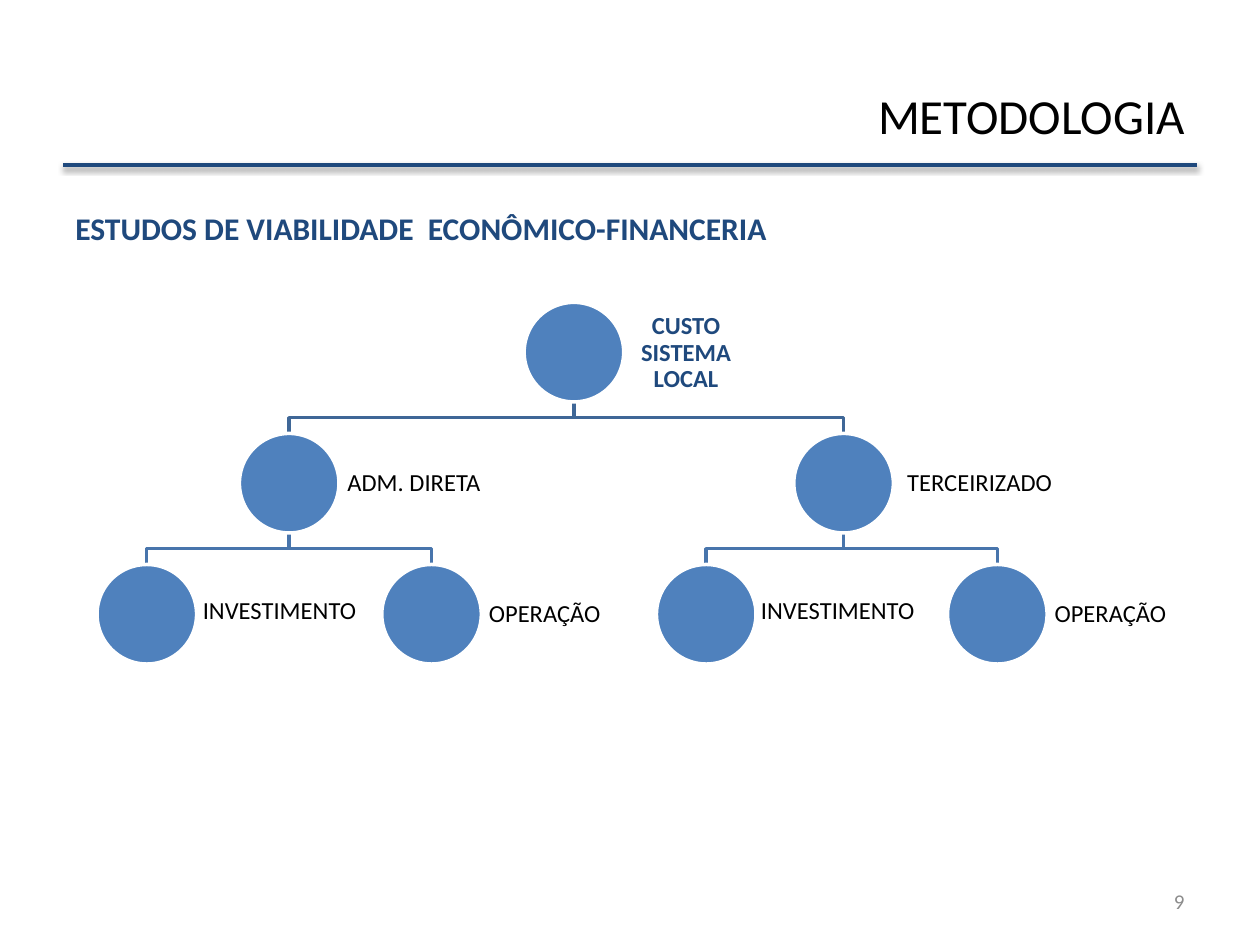
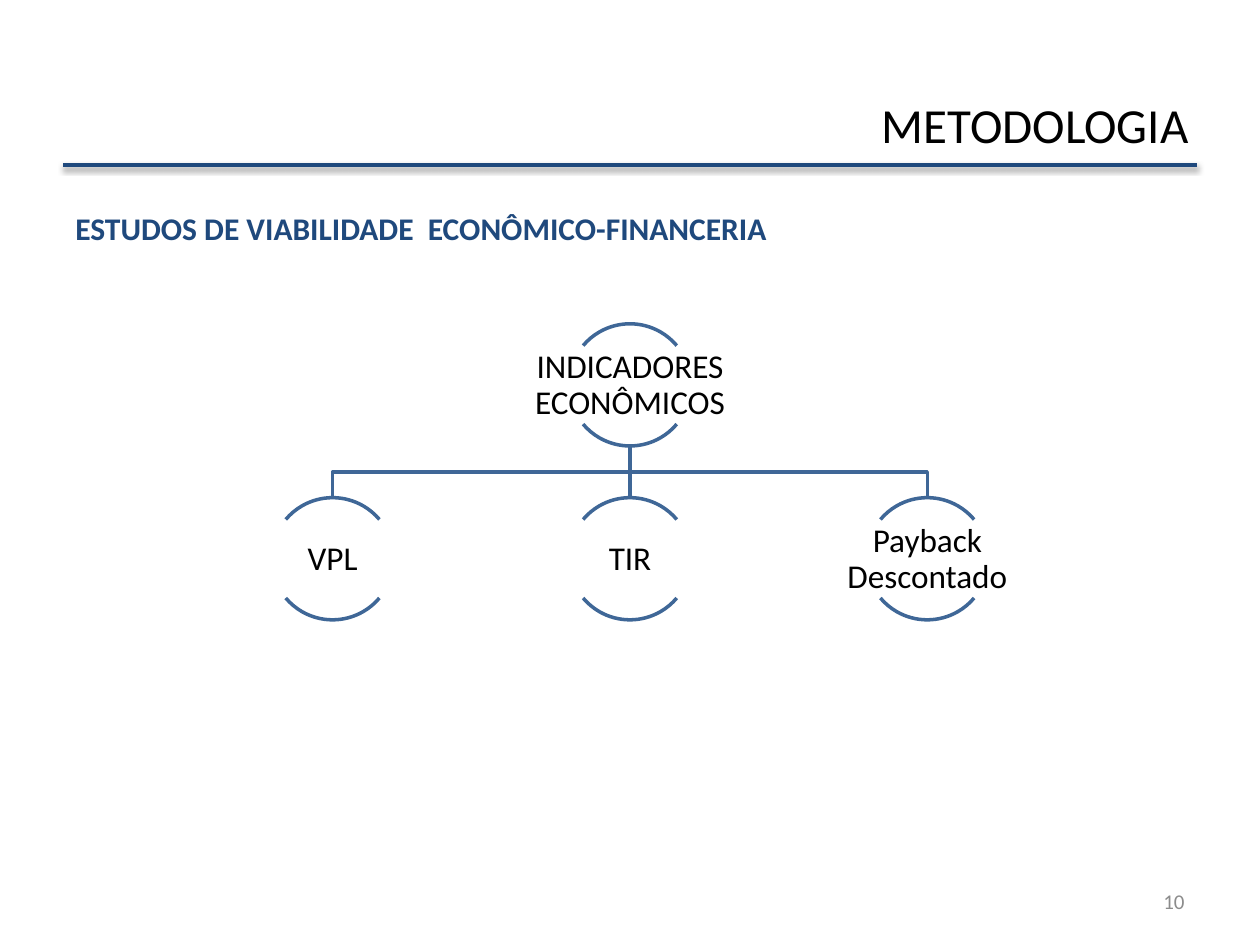
from dataclasses import dataclass

from lxml.etree import SubElement
from pptx import Presentation
from pptx.dml.color import RGBColor
from pptx.enum.shapes import MSO_CONNECTOR, MSO_SHAPE
from pptx.enum.text import MSO_ANCHOR, PP_ALIGN
from pptx.oxml.ns import qn
from pptx.util import Inches, Pt


@dataclass(frozen=True)
class Theme:
    font: str = "Calibri"
    navy: str = "1F497D"
    blue: str = "4F81BD"
    upper_branch: str = "3F6797"
    lower_branch: str = "4875AC"
    black: str = "000000"
    white: str = "FFFFFF"
    gray: str = "8C8C8C"
    title: int = 28
    subtitle: int = 18
    indicator: int = 19
    cost: int = 14
    page: int = 12
    stroke: int = 2


@dataclass(frozen=True)
class Cost:
    label: str
    left: float
    level: int
    parent: int | None
    label_dx: float = 0.79
    label_dy: float = 0
    label_width: float = 1.19
    centered: bool = False


THEME = Theme()
COSTS = [
    Cost("CUSTO SISTEMA LOCAL", 3.39, 0, None, 0.69, 0.01, centered=True),
    Cost("ADM. DIRETA", 1.13, 1, 0, centered=True),
    Cost("TERCEIRIZADO", 5.53, 1, 0, 0.84, 0, 1.45),
    Cost("INVESTIMENTO", 0, 2, 1, 0.78, -0.02, 1.36),
    Cost("OPERAÇÃO", 2.26, 2, 1),
    Cost("INVESTIMENTO", 4.44, 2, 2, 0.77, -0.02, 1.44),
    Cost("OPERAÇÃO", 6.75, 2, 2),
]
INDICATORS = ["VPL", "TIR", "Payback Descontado"]


def color(value):
    return RGBColor.from_string(value)


def write(slide, text, box, size=THEME.cost, ink=THEME.black, bold=False,
          align=PP_ALIGN.LEFT, anchor=MSO_ANCHOR.MIDDLE, inset=None, spacing=None):
    frame = slide.shapes.add_textbox(*map(Inches, box)).text_frame
    frame.word_wrap = True
    frame.vertical_anchor = anchor
    if inset is not None:
        frame.margin_left = frame.margin_right = Inches(inset)
        frame.margin_top = frame.margin_bottom = Inches(inset)
    paragraph = frame.paragraphs[0]
    paragraph.alignment = align
    if spacing:
        paragraph.line_spacing = spacing
    run = paragraph.add_run()
    run.text = text
    run.font.name = THEME.font
    run.font.size = Pt(size)
    run.font.bold = bold
    run.font.color.rgb = color(ink)


def stroke(line, ink):
    line.color.rgb = color(ink)
    line.width = Pt(THEME.stroke)


def straight_line(slide, start, end, ink):
    connector = slide.shapes.add_connector(
        MSO_CONNECTOR.STRAIGHT, *map(Inches, (*start, *end)))
    stroke(connector.line, ink)
    return SubElement(connector._element.spPr, qn("a:effectLst"))


def branch(slide, start, end, ink):
    if start[0] == end[0]:
        straight_line(slide, start, end, ink)
        return
    middle = (start[1] + end[1]) / 2
    corners = [(start[0], middle), (end[0], middle), end]
    builder = slide.shapes.build_freeform(*map(Inches, start))
    builder.add_line_segments(
        [(Inches(x), Inches(y)) for x, y in corners], close=False)
    elbow = builder.convert_to_shape()
    elbow.shadow.inherit = False
    elbow.fill.background()
    stroke(elbow.line, ink)


def header_rule(slide, left, top, width):
    effects = straight_line(slide, (left, top), (left + width, top), THEME.navy)
    shadow = SubElement(effects, qn("a:outerShdw"), blurRad="40000",
                        dist="20000", dir="5400000", rotWithShape="0")
    ink = SubElement(shadow, qn("a:srgbClr"), val=THEME.black)
    SubElement(ink, qn("a:alpha"), val="38000")


def methodology_slide(deck, page, title_left, title_top):
    slide = deck.slides.add_slide(deck.slide_layouts[6])
    write(slide, str(page), (7.17, 6.95, 2.33, 0.4), size=THEME.page,
          ink=THEME.gray, align=PP_ALIGN.RIGHT)
    write(slide, "METODOLOGIA", (title_left, title_top, 9, 1.25),
          size=THEME.title, align=PP_ALIGN.RIGHT)
    header_rule(slide, 0.5, 1.31, 9)
    write(slide, "ESTUDOS DE VIABILIDADE  ECONÔMICO-FINANCERIA",
          (0.5, 1.61, 6, 0.4), size=THEME.subtitle, ink=THEME.navy, bold=True,
          anchor=MSO_ANCHOR.TOP)
    return slide


def cost_tree(slide, left, top, diameter=0.79, level_step=1.04):
    def corner(cost):
        return left + cost.left, top + cost.level * level_step

    for cost in COSTS:
        if cost.parent is None:
            continue
        parent_x, parent_y = corner(COSTS[cost.parent])
        x, y = corner(cost)
        branch(slide, (parent_x + diameter / 2, parent_y + diameter),
               (x + diameter / 2, y),
               THEME.upper_branch if cost.level == 1 else THEME.lower_branch)

    for cost in COSTS:
        x, y = corner(cost)
        circle = slide.shapes.add_shape(
            MSO_SHAPE.OVAL, *map(Inches, (x, y, diameter, diameter)))
        circle.shadow.inherit = False
        circle.fill.solid()
        circle.fill.fore_color.rgb = color(THEME.blue)
        stroke(circle.line, THEME.white)
        is_root = cost.parent is None
        write(slide, cost.label,
              (x + cost.label_dx, y + cost.label_dy, cost.label_width, diameter),
              ink=THEME.navy if is_root else THEME.black, bold=is_root,
              align=PP_ALIGN.CENTER if cost.centered else PP_ALIGN.LEFT,
              inset=0.06, spacing=0.9)


def indicator_node(slide, label, center, top, diameter, label_width=1.95):
    for angles in ((132, 192), (24, 84)):
        arc = slide.shapes.add_shape(
            MSO_SHAPE.ARC,
            *map(Inches, (center - diameter / 2, top, diameter, diameter)))
        arc.adjustments[0], arc.adjustments[1] = angles
        arc.shadow.inherit = False
        arc.fill.background()
        stroke(arc.line, THEME.upper_branch)
    write(slide, label, (center - label_width / 2, top + 0.18, label_width, 0.62),
          size=THEME.indicator, align=PP_ALIGN.CENTER, inset=0.01, spacing=0.9)


def indicator_tree(slide, center, top, diameter=0.97, column_step=2.36,
                   level_step=1.38):
    middle_column = (len(INDICATORS) - 1) / 2
    columns = [center + (index - middle_column) * column_step
               for index in range(len(INDICATORS))]
    for column in columns:
        branch(slide, (center, top + diameter), (column, top + level_step),
               THEME.upper_branch)
    indicator_node(slide, "INDICADORES ECONÔMICOS", center, top, diameter)
    for label, column in zip(INDICATORS, columns):
        indicator_node(slide, label, column, top + level_step, diameter)


def main():
    deck = Presentation()
    deck.slide_width, deck.slide_height = Inches(10), Inches(7.5)
    cost_tree(methodology_slide(deck, 9, 0.5, 0.29), 0.77, 2.4)
    indicator_tree(methodology_slide(deck, 10, 0.53, 0.36), 5, 2.57)
    deck.save("out.pptx")


if __name__ == "__main__":
    main()
